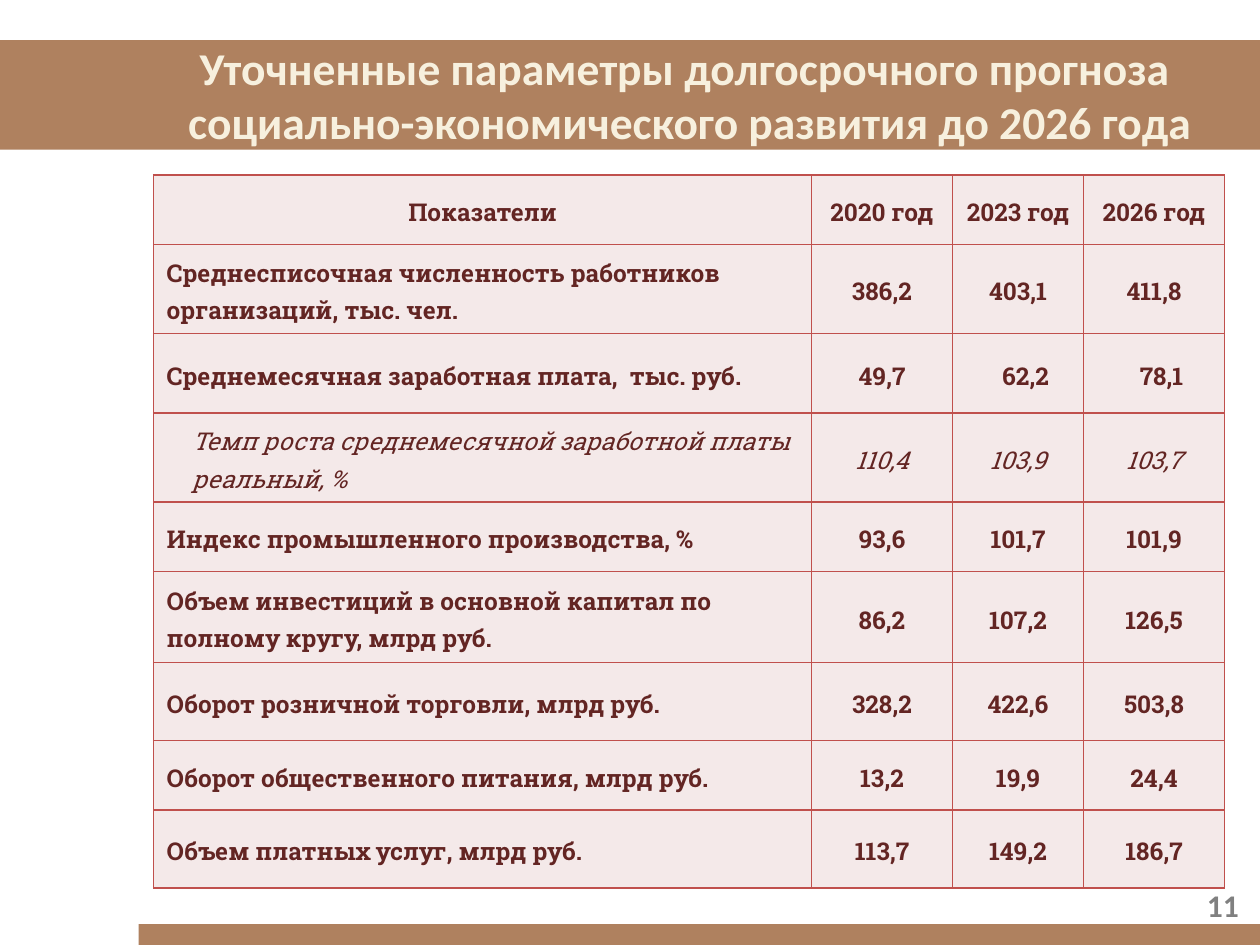
from lxml import etree
from pptx import Presentation
from pptx.dml.color import RGBColor
from pptx.enum.shapes import MSO_SHAPE
from pptx.enum.text import MSO_ANCHOR, PP_ALIGN
from pptx.oxml.ns import qn
from pptx.util import Pt

RECT = MSO_SHAPE.RECTANGLE
MIDDLE = MSO_ANCHOR.MIDDLE
LEFT, CENTER, RIGHT = PP_ALIGN.LEFT, PP_ALIGN.CENTER, PP_ALIGN.RIGHT

COLORS = {
    "band": "AF815F",
    "title": "F7F0DE",
    "number": "808080",
    "ink": "632523",
    "cell": "F4E9E9",
    "rule": "C0504D",
}
TITLE = ("Уточненные параметры долгосрочного прогноза \v"
         "социально-экономического развития до 2026 года")
COLS = [376, 80.5, 75, 80.5]
ROWS = [39.6, 51, 45.4, 51, 39.6, 52, 44.6, 39.6, 44.6]
HEAD = ["Показатели", "2020 год", "2023 год", "2026 год"]
DATA = [
    ["Среднесписочная численность работников организаций, тыс. чел.",
     "386,2", "403,1", "411,8"],
    ["Среднемесячная заработная плата,  тыс. руб.", "49,7", "62,2", "78,1"],
    ["Темп роста среднемесячной заработной платы реальный, %",
     "110,4", "103,9", "103,7"],
    ["Индекс промышленного производства, %", "93,6", "101,7", "101,9"],
    ["Объем инвестиций в основной капитал по полному кругу, млрд руб.",
     "86,2", "107,2", "126,5"],
    ["Оборот розничной торговли, млрд руб.", "328,2", "422,6", "503,8"],
    ["Оборот общественного питания, млрд руб.", "13,2", "19,9", "24,4"],
    ["Объем платных услуг, млрд руб.", "113,7", "149,2", "186,7"],
]
WAGE_ROW, RATE_ROW = 2, 3


def rgb(name):
    return RGBColor.from_string(COLORS[name])


def style(font, face, size, color, bold=True, italic=False):
    font.name, font.size = face, Pt(size)
    font.bold, font.italic = bold, italic
    font.color.rgb = rgb(color)


def add_band(slide, x, y, w, h):
    band = slide.shapes.add_shape(RECT, Pt(x), Pt(y), Pt(w), Pt(h))
    band.shadow.inherit = False
    band.fill.solid()
    band.fill.fore_color.rgb = rgb("band")
    band.line.fill.background()


def add_label(slide, x, y, w, h, text, size, color, align):
    frame = slide.shapes.add_textbox(Pt(x), Pt(y), Pt(w), Pt(h)).text_frame
    frame.word_wrap = True
    frame.vertical_anchor = MIDDLE
    para = frame.paragraphs[0]
    para.text = text
    para.alignment = align
    for run in para.runs:
        style(run.font, "Calibri", size, color)


def add_rules(cell):
    """Draw the four borders of a cell."""
    props = cell._tc.get_or_add_tcPr()
    for i, side in enumerate(("lnL", "lnR", "lnT", "lnB")):
        line = etree.Element(qn("a:" + side), w=str(Pt(1)))
        fill = etree.SubElement(line, qn("a:solidFill"))
        etree.SubElement(fill, qn("a:srgbClr"), val=COLORS["rule"])
        props.insert(i, line)


def fill_cell(cell, text, align, indent, italic):
    cell.fill.solid()
    cell.fill.fore_color.rgb = rgb("cell")
    add_rules(cell)
    cell.vertical_anchor = MIDDLE
    cell.margin_left = cell.margin_right = Pt(1)
    cell.margin_top = cell.margin_bottom = 0
    para = cell.text_frame.paragraphs[0]
    para.text = text
    para.alignment = align
    para.line_spacing = 1.15
    if indent:
        para._p.get_or_add_pPr().set("marL", str(Pt(indent)))
    style(para.runs[0].font, "Roboto Slab", 14, "ink", not italic, italic)


def add_grid(slide, x, y):
    grid = slide.shapes.add_table(len(ROWS), len(COLS), Pt(x), Pt(y),
                                  Pt(sum(COLS)), Pt(sum(ROWS))).table
    for col, width in zip(grid.columns, COLS):
        col.width = Pt(width)
    for row, height in zip(grid.rows, ROWS):
        row.height = Pt(height)
    for r, texts in enumerate([HEAD] + DATA):
        for c, text in enumerate(texts):
            align, indent = CENTER, 0
            if r and c == 0:
                align, indent = LEFT, 21 if r == RATE_ROW else 6.5
            elif r == WAGE_ROW and c > 1:
                indent = 8.6
            fill_cell(grid.cell(r, c), text, align, indent, r == RATE_ROW)


def main():
    deck = Presentation()
    deck.slide_width, deck.slide_height = Pt(720), Pt(540)
    slide = deck.slides.add_slide(deck.slide_layouts[6])
    add_band(slide, 79.2, 528, 640.8, 12)
    add_band(slide, 0, 23, 720, 62.5)
    add_label(slide, 70.5, 21, 648, 65.5, TITLE, 26, "title", CENTER)
    add_label(slide, 547, 502.5, 168, 29, "11", 18, "number", RIGHT)
    add_grid(slide, 87.8, 100)
    deck.save("out.pptx")


if __name__ == "__main__":
    main()
